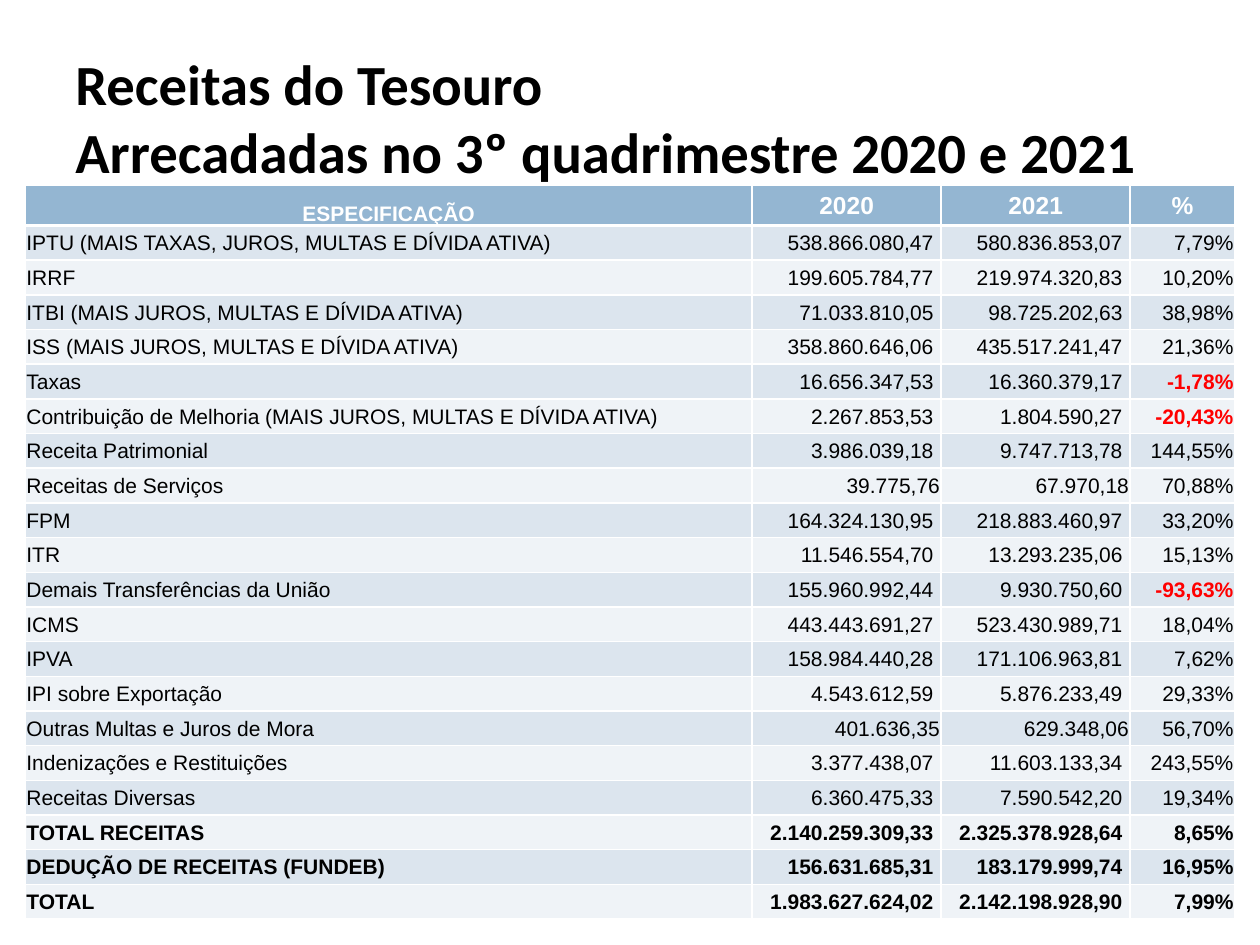
from lxml import etree
from pptx import Presentation
from pptx.dml.color import RGBColor
from pptx.enum import text
from pptx.oxml import ns
from pptx.util import Inches, Pt

BLACK = RGBColor(0x00, 0x00, 0x00)
WHITE = RGBColor(0xFF, 0xFF, 0xFF)
RED = RGBColor(0xFF, 0x00, 0x00)
HEADER_BLUE = RGBColor(0x94, 0xB6, 0xD2)
BANDS = (RGBColor(0xDC, 0xE5, 0xEE), RGBColor(0xEF, 0xF3, 0xF7))

TITLE = ("Receitas do Tesouro", "Arrecadadas no 3º quadrimestre 2020 e 2021")
HEADER = ("ESPECIFICAÇÃO", "2020", "2021", "%")
REVENUES = (
    ("IPTU (MAIS TAXAS, JUROS, MULTAS E DÍVIDA ATIVA)", "538.866.080,47", "580.836.853,07", "7,79%"),
    ("IRRF", "199.605.784,77", "219.974.320,83", "10,20%"),
    ("ITBI (MAIS JUROS, MULTAS E DÍVIDA ATIVA)", "71.033.810,05", "98.725.202,63", "38,98%"),
    ("ISS (MAIS JUROS, MULTAS E DÍVIDA ATIVA)", "358.860.646,06", "435.517.241,47", "21,36%"),
    ("Taxas", "16.656.347,53", "16.360.379,17", "-1,78%"),
    ("Contribuição de Melhoria (MAIS JUROS, MULTAS E DÍVIDA ATIVA)", "2.267.853,53", "1.804.590,27", "-20,43%"),
    ("Receita Patrimonial", "3.986.039,18", "9.747.713,78", "144,55%"),
    ("Receitas de Serviços", "39.775,76", "67.970,18", "70,88%"),
    ("FPM", "164.324.130,95", "218.883.460,97", "33,20%"),
    ("ITR", "11.546.554,70", "13.293.235,06", "15,13%"),
    ("Demais Transferências da União", "155.960.992,44", "9.930.750,60", "-93,63%"),
    ("ICMS", "443.443.691,27", "523.430.989,71", "18,04%"),
    ("IPVA", "158.984.440,28", "171.106.963,81", "7,62%"),
    ("IPI sobre Exportação", "4.543.612,59", "5.876.233,49", "29,33%"),
    ("Outras Multas e Juros de Mora", "401.636,35", "629.348,06", "56,70%"),
    ("Indenizações e Restituições", "3.377.438,07", "11.603.133,34", "243,55%"),
    ("Receitas Diversas", "6.360.475,33", "7.590.542,20", "19,34%"),
)
TOTALS = (
    ("TOTAL RECEITAS", "2.140.259.309,33", "2.325.378.928,64", "8,65%"),
    ("DEDUÇÃO DE RECEITAS (FUNDEB)", "156.631.685,31", "183.179.999,74", "16,95%"),
    ("TOTAL", "1.983.627.624,02", "2.142.198.928,90", "7,99%"),
)

COLUMN_WIDTHS = (5.77, 1.5, 1.5, 0.83)
TABLE_HEIGHT = 5.83
HEADER_HEIGHT = 0.32


def style_font(paragraph, name, size, color, bold):
    font = paragraph.font
    font.name, font.size, font.bold = name, Pt(size), bold
    font.color.rgb = color


def add_title(slide):
    box = slide.shapes.add_textbox(Inches(0.5), Inches(0.3), Inches(9), Inches(1.25))
    frame = box.text_frame
    frame.word_wrap = True
    frame.vertical_anchor = text.MSO_ANCHOR.MIDDLE
    paragraph = frame.paragraphs[0]
    paragraph.text = "\v".join(TITLE)
    style_font(paragraph, "Calibri", 32.4, BLACK, True)


def add_borders(cell, top=1, bottom=1):
    """Draw white borders; widths are in points."""
    properties = cell._tc.get_or_add_tcPr()
    for side, width in (("L", 1), ("R", 1), ("T", top), ("B", bottom)):
        line = etree.SubElement(properties, ns.qn(f"a:ln{side}"), w=str(Pt(width)))
        fill = etree.SubElement(line, ns.qn("a:solidFill"))
        etree.SubElement(fill, ns.qn("a:srgbClr"), val=str(WHITE))


def fill_cell(cell, content, background, alignment, size=12, color=BLACK, bold=False):
    cell.fill.solid()
    cell.fill.fore_color.rgb = background
    cell.margin_left = cell.margin_right = cell.margin_top = Inches(0.01)
    cell.margin_bottom = 0
    cell.vertical_anchor = text.MSO_ANCHOR.MIDDLE
    paragraph = cell.text_frame.paragraphs[0]
    paragraph.text = content
    paragraph.alignment = alignment
    style_font(paragraph, "Arial", size, color, bold)


def fill_header(table):
    for column, label in enumerate(HEADER):
        cell = table.cell(0, column)
        add_borders(cell, bottom=1.5)
        fill_cell(cell, label, HEADER_BLUE, text.PP_ALIGN.CENTER,
                  14 if column else 12, WHITE, True)
    table.cell(0, 0).vertical_anchor = text.MSO_ANCHOR.BOTTOM


def fill_row(table, row, values, bold):
    for column, value in enumerate(values):
        cell = table.cell(row, column)
        negative = value.startswith("-")
        add_borders(cell, top=1.5 if row == 1 else 1)
        fill_cell(cell, value, BANDS[(row - 1) % 2],
                  text.PP_ALIGN.RIGHT if column else text.PP_ALIGN.LEFT,
                  color=RED if negative else BLACK, bold=bold or negative)
        # Amounts in the millions stand slightly off the right edge
        if value.count(".") > 1:
            cell.margin_right = Inches(0.06)


def add_revenue_table(slide):
    rows = REVENUES + TOTALS
    table = slide.shapes.add_table(
        len(rows) + 1, len(HEADER), Inches(0.2), Inches(1.47),
        Inches(sum(COLUMN_WIDTHS)), Inches(TABLE_HEIGHT)).table
    for column, width in zip(table.columns, COLUMN_WIDTHS):
        column.width = Inches(width)
    for row in table.rows:
        row.height = Inches((TABLE_HEIGHT - HEADER_HEIGHT) / len(rows))
    table.rows[0].height = Inches(HEADER_HEIGHT)
    fill_header(table)
    for number, values in enumerate(rows, 1):
        fill_row(table, number, values, bold=values in TOTALS)


def main():
    presentation = Presentation()
    presentation.slide_width = Inches(10)
    presentation.slide_height = Inches(7.5)
    slide = presentation.slides.add_slide(presentation.slide_layouts[6])
    add_title(slide)
    add_revenue_table(slide)
    presentation.save("out.pptx")


if __name__ == "__main__":
    main()
